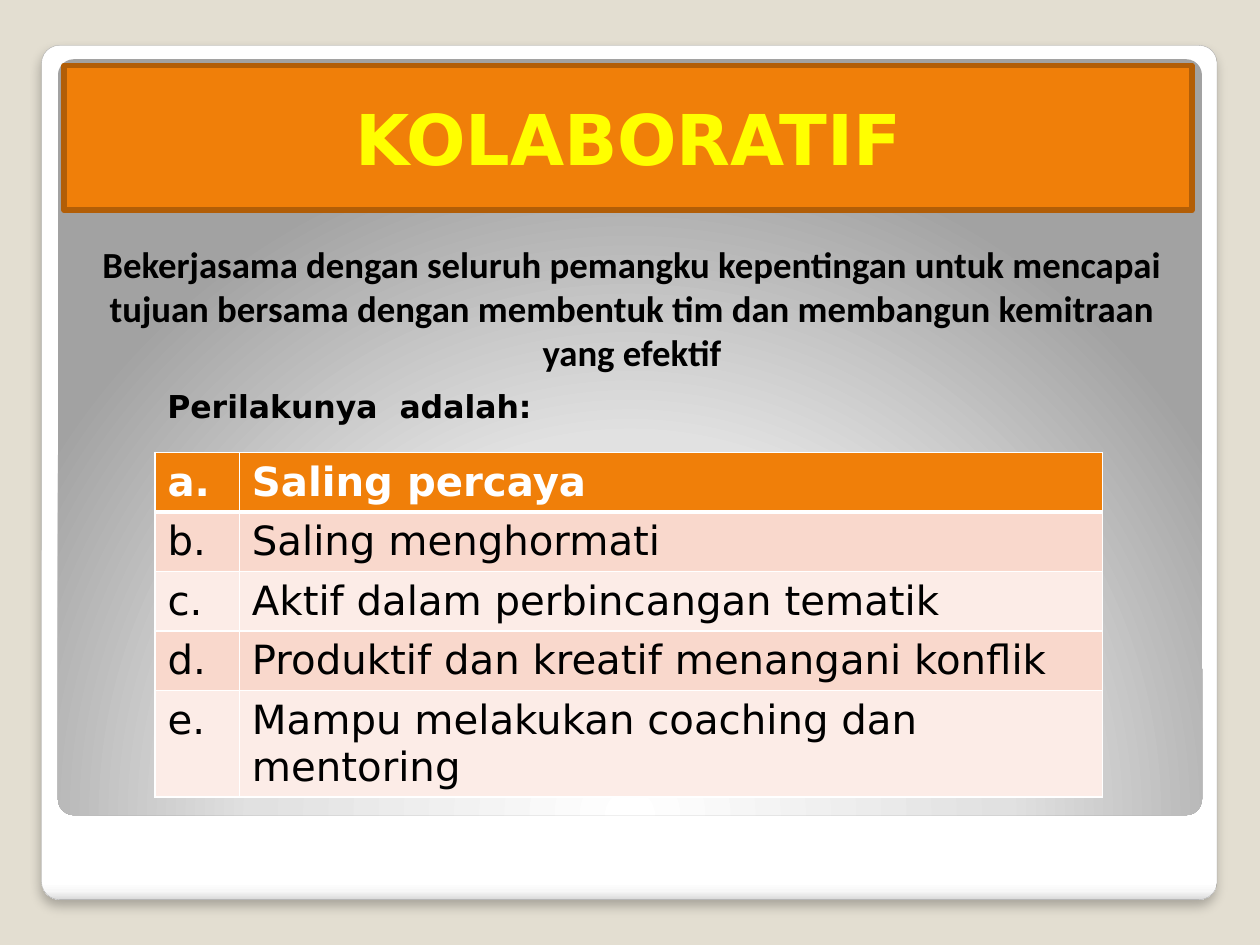
from lxml import etree
from pptx import Presentation
from pptx.dml.color import RGBColor
from pptx.enum.shapes import MSO_SHAPE
from pptx.enum.text import MSO_ANCHOR, PP_ALIGN
from pptx.oxml import parse_xml
from pptx.oxml.ns import nsdecls, qn
from pptx.util import Inches, Pt

ROUNDED, RECTANGLE = MSO_SHAPE.ROUNDED_RECTANGLE, MSO_SHAPE.RECTANGLE
TOP, MIDDLE, BOTTOM = MSO_ANCHOR.TOP, MSO_ANCHOR.MIDDLE, MSO_ANCHOR.BOTTOM
LEFT, CENTER = PP_ALIGN.LEFT, PP_ALIGN.CENTER

THEME = {
    "background": "E3DED1", "orange": "F07F09", "dark_orange": "B25E07",
    "yellow": "FFFF00", "black": "000000", "white": "FFFFFF", "edge": "A4A4A4",
    "bands": ["F9D8CC", "FCECE7"],
    "frame_stops": [(0, "FFFFFF"), (98, "FFFFFF"), (99, "F7F7F7"), (100, "DADADA")],
    "panel_stops": [(0, "FFFFFF"), (55, "E1E1E1"), (100, "A2A2A2")],
    "sans": "DejaVu Sans", "body": "Calibri",
    "banner_size": 40, "table_size": 23, "title_size": 21, "label_size": 18,
}

deck = Presentation()
deck.slide_width, deck.slide_height = Inches(10), Inches(7.5)
column, row = deck.slide_width / 100, deck.slide_height / 100
page = deck.slides.add_slide(deck.slide_layouts[6])
page.background.fill.solid()
page.background.fill.fore_color.rgb = RGBColor.from_string(THEME["background"])


def grid(left, top, width, height):
    return int(left * column), int(top * row), int(width * column), int(height * row)


def write(frame, text, size, color, font, bold=True, align=LEFT, anchor=TOP):
    frame.text = text
    frame.word_wrap = True
    frame.vertical_anchor = anchor
    para = frame.paragraphs[0]
    para.alignment = align
    span = para.runs[0]
    span.font.size, span.font.name, span.font.bold = Pt(THEME[size]), THEME[font], bold
    span.font.color.rgb = RGBColor.from_string(THEME[color])


backdrops = [
    (grid(3.3, 4.8, 93.3, 90.4), "frame_stops", '<a:lin ang="5400000" scaled="0"/>'),
    (grid(4.6, 6.27, 90.8, 80), "panel_stops",
     '<a:path path="circle"><a:fillToRect l="50000" t="175000" r="50000" b="-75000"/></a:path>'),
]
for area, stops, direction in backdrops:
    box = page.shapes.add_shape(ROUNDED, *area)
    box.adjustments[0] = 0.021
    box.shadow.inherit = False
    marks = "".join(f'<a:gs pos="{share * 1000}"><a:srgbClr val="{color}"/></a:gs>'
                    for share, color in THEME[stops])
    gradient = parse_xml(f'<a:gradFill {nsdecls("a")} rotWithShape="1">'
                         f'<a:gsLst>{marks}</a:gsLst>{direction}</a:gradFill>')
    box._element.spPr.find(qn("a:prstGeom")).addnext(gradient)
    if stops == "frame_stops":
        box.line.color.rgb = RGBColor.from_string(THEME["edge"])
        box.line.width = Pt(0.16)
        box._element.spPr.find(qn("a:effectLst")).append(parse_xml(
            f'<a:outerShdw {nsdecls("a")} blurRad="{Pt(6)}" dist="{Pt(4)}" dir="5400000" '
            f'algn="t" rotWithShape="0"><a:srgbClr val="{THEME["black"]}">'
            '<a:alpha val="25000"/></a:srgbClr></a:outerShdw>'))
    else:
        box.line.fill.background()

behaviours = [
    "Saling percaya",
    "Saling menghormati",
    "Aktif dalam perbincangan tematik",
    "Produktif dan kreatif menangani konflik",
    "Mampu melakukan coaching dan mentoring",
]
heights = [6.3] * 4 + [11.26]
table = page.shapes.add_table(5, 2, *grid(12.3, 47.87, 75.2, sum(heights))).table
table.first_row = table.horz_banding = False
table.columns[0].width, table.columns[1].width = int(6.7 * column), int(68.5 * column)
for index, behaviour in enumerate(behaviours):
    table.rows[index].height = int(heights[index] * row)
    header = index == 0
    fill = THEME["orange"] if header else THEME["bands"][(index - 1) % 2]
    widths = {"L": 1, "R": 1, "T": 3 if index == 1 else 1, "B": 3 if header else 1}
    for position, text in enumerate(["abcde"[index] + ".", behaviour]):
        cell = table.cell(index, position)
        write(cell.text_frame, text, "table_size", "white" if header else "black", "sans", header)
        properties = cell._tc.get_or_add_tcPr()
        for side, width in widths.items():
            border = etree.SubElement(properties, qn(f"a:ln{side}"), w=str(Pt(width)))
            paint = etree.SubElement(border, qn("a:solidFill"))
            etree.SubElement(paint, qn("a:srgbClr"), val=THEME["white"])
        cell.fill.solid()
        cell.fill.fore_color.rgb = RGBColor.from_string(fill)

banner = page.shapes.add_shape(RECTANGLE, *grid(5.1, 6.93, 89.5, 15.33))
banner.shadow.inherit = False
banner.fill.solid()
banner.fill.fore_color.rgb = RGBColor.from_string(THEME["orange"])
banner.line.color.rgb = RGBColor.from_string(THEME["dark_orange"])
banner.line.width = Pt(3.35)
write(banner.text_frame, "KOLABORATIF", "banner_size", "yellow", "sans",
      align=CENTER, anchor=MIDDLE)

title = page.shapes.add_textbox(*grid(5.4, 24.93, 89.5, 15.33))
write(title.text_frame,
      "Bekerjasama dengan seluruh pemangku kepentingan untuk mencapai tujuan bersama "
      "dengan membentuk tim dan membangun kemitraan yang efektif",
      "title_size", "black", "body", align=CENTER, anchor=BOTTOM)

label = page.shapes.add_textbox(*grid(12.3, 40.27, 31.6, 5.33))
write(label.text_frame, "Perilakunya  adalah:", "label_size", "black", "sans")

deck.save("out.pptx")
